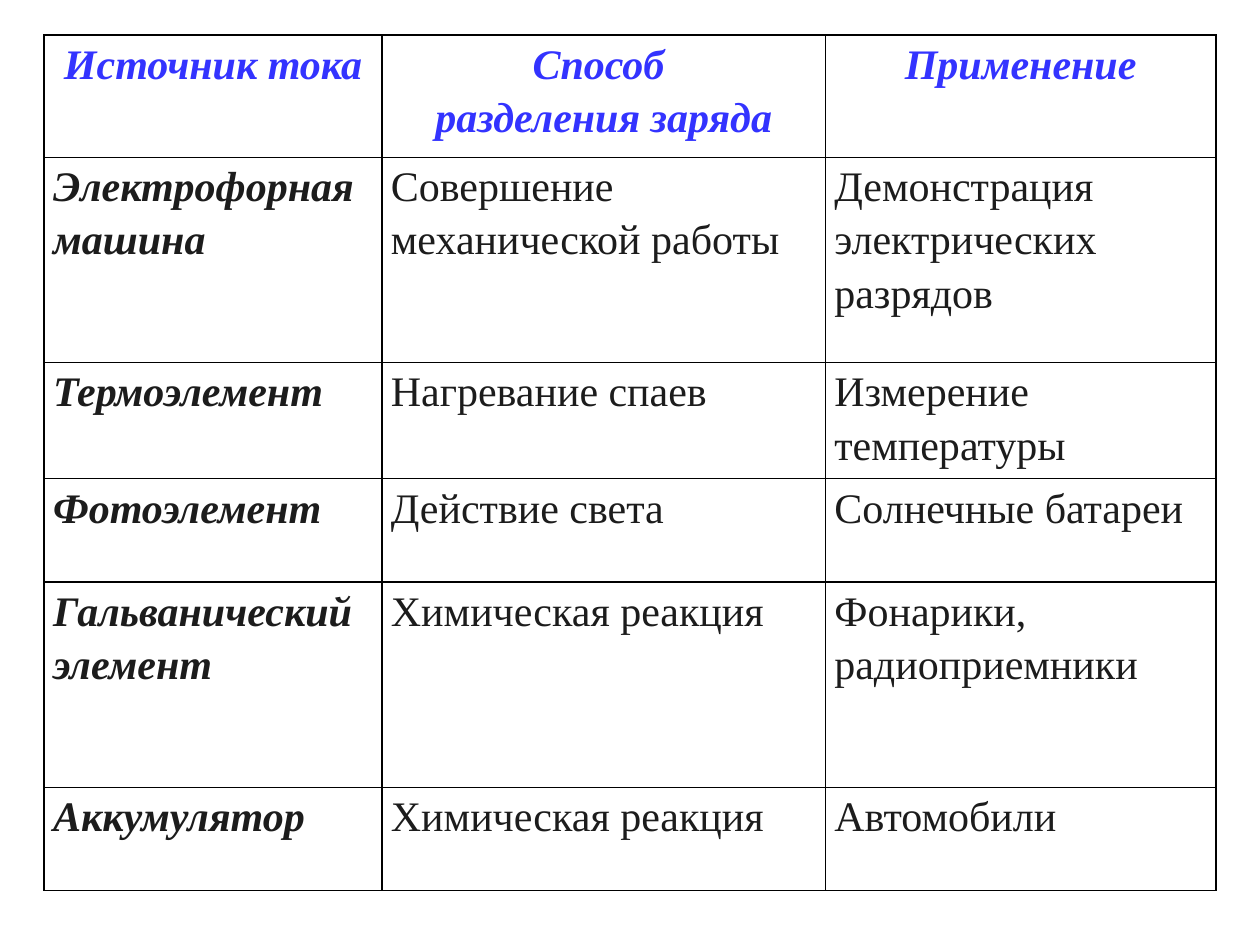
"""Slide with a table of electric current sources."""
from lxml.etree import SubElement
from pptx import Presentation
from pptx.dml.color import RGBColor
from pptx.enum.text import PP_ALIGN
from pptx.oxml.ns import qn
from pptx.util import Cm, Pt

COLORS = {"header": "3333FF", "text": "1C1C1C", "fill": "FFFFFF", "border": "000000"}
FONT = "Times New Roman"
COL_WIDTHS = [6.81, 8.94, 7.87]
ROW_HEIGHTS = [2.46, 4.14, 2.34, 2.08, 4.14, 2.08]
ROWS = [
    ["Источник тока", "Способ \nразделения заряда", "Применение"],
    ["Электрофорная машина", "Совершение механической работы",
     "Демонстрация электрических разрядов"],
    ["Термоэлемент", "Нагревание спаев", "Измерение температуры"],
    ["Фотоэлемент", "Действие света", "Солнечные батареи"],
    ["Гальванический элемент", "Химическая реакция", "Фонарики, радиоприемники"],
    ["Аккумулятор", "Химическая реакция", "Автомобили"],
]


def set_borders(cell):
    tcPr = cell._tc.get_or_add_tcPr()
    for side in ("a:lnL", "a:lnR", "a:lnT", "a:lnB"):
        ln = SubElement(tcPr, qn(side), w=str(Pt(1)))
        fill = SubElement(ln, qn("a:solidFill"))
        SubElement(fill, qn("a:srgbClr"), val=COLORS["border"])


def write_cell(cell, text, header, emphasis):
    cell.margin_left = cell.margin_right = Cm(0.18)
    cell.margin_top = cell.margin_bottom = Cm(0)
    set_borders(cell)
    cell.fill.solid()
    cell.fill.fore_color.rgb = RGBColor.from_string(COLORS["fill"])
    tf = cell.text_frame
    for i, line in enumerate(text.split("\n")):
        p = tf.add_paragraph() if i else tf.paragraphs[0]
        p.alignment = PP_ALIGN.CENTER if header else PP_ALIGN.LEFT
        p.line_spacing = 1.15
        r = p.add_run()
        r.text = line
        r.font.name = FONT
        r.font.size = Pt(24)
        r.font.bold = r.font.italic = emphasis
        r.font.color.rgb = RGBColor.from_string(COLORS["header" if header else "text"])


def add_sources_table(s):
    table = s.shapes.add_table(len(ROWS), len(COL_WIDTHS), Cm(0.89), Cm(0.71),
                               Cm(sum(COL_WIDTHS)), Cm(sum(ROW_HEIGHTS))).table
    table.first_row = table.horz_banding = False
    for column, width in zip(table.columns, COL_WIDTHS):
        column.width = Cm(width)
    for row, height in zip(table.rows, ROW_HEIGHTS):
        row.height = Cm(height)
    for i, texts in enumerate(ROWS):
        for j, text in enumerate(texts):
            write_cell(table.cell(i, j), text, header=i == 0, emphasis=i == 0 or j == 0)


def main():
    prs = Presentation()
    prs.slide_width, prs.slide_height = Cm(25.4), Cm(19.05)
    s = prs.slides.add_slide(prs.slide_layouts[6])
    add_sources_table(s)
    prs.save("out.pptx")


if __name__ == "__main__":
    main()
